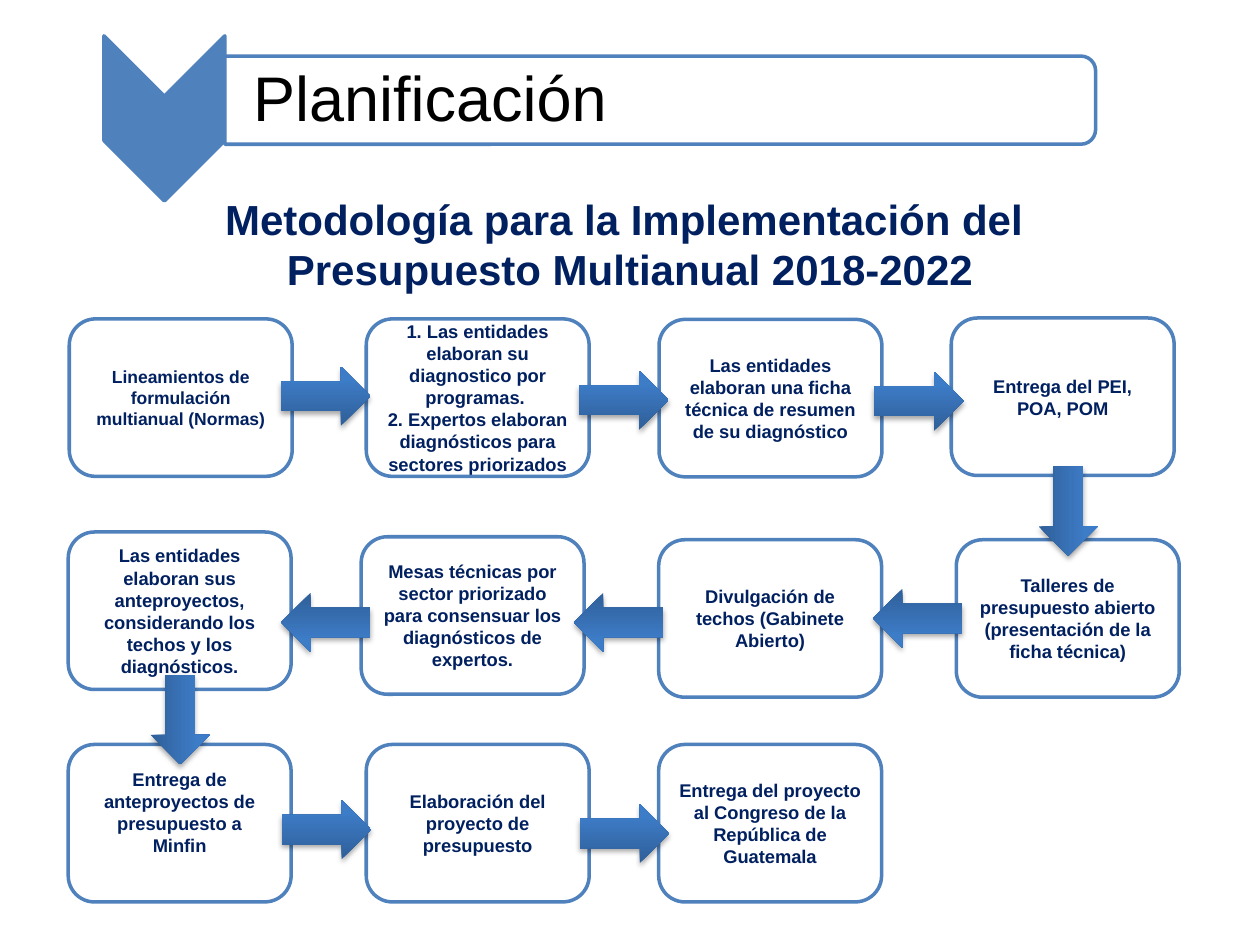
from dataclasses import dataclass

import lxml.etree
import pptx
import pptx.dml.color
import pptx.enum.shapes
import pptx.enum.text
import pptx.oxml
import pptx.oxml.ns
import pptx.util

Pt = pptx.util.Pt
KIND = pptx.enum.shapes.MSO_SHAPE
ALIGN = pptx.enum.text.PP_ALIGN
HUES = {"blue": "4F81BD", "navy": "002060", "white": "FFFFFF", "black": "000000",
        "dark": "2F5F99", "mid": "3D7CC7", "light": "3A7CCB"}
BOX_W, BOX_H = 127.4, 90
ARROW_W, ARROW_H = 51.1, 33.8


@dataclass
class Step:
    left: float
    top: float
    lines: list[str]
    size: float = 10.5
    foot: float = 3.6


@dataclass
class Arrow:
    left: float
    top: float
    turn: int = 0


STEPS = [
    # Top row
    Step(39.6, 182.2, ["Lineamientos de formulación multianual (Normas)"], size=10),
    Step(209.3, 182.2, ["1. Las entidades elaboran su diagnostico por programas. ",
                        "2. Expertos elaboran diagnósticos para sectores priorizados"]),
    Step(376.6, 182.5, ["Las entidades elaboran una ficha técnica de resumen de su diagnóstico"]),
    Step(543.6, 181.7, ["Entrega del PEI, POA, POM"]),
    # Middle row, read from right to left
    Step(546.5, 308.4, ["Talleres de presupuesto abierto (presentación de la ficha técnica)"]),
    Step(376.4, 308.4, ["Divulgación de techos (Gabinete Abierto)"]),
    Step(206.4, 306.7, ["Mesas técnicas por sector priorizado para consensuar "
                        "los diagnósticos de expertos."]),
    Step(39, 304, ["Las entidades elaboran sus anteproyectos, considerando "
                   "los techos y los diagnósticos."]),
    # Bottom row
    Step(39, 425.4, ["Entrega de anteproyectos de presupuesto a Minfin"], foot=15.8),
    Step(209.3, 425.4, ["Elaboración del proyecto de presupuesto"]),
    Step(376.4, 425.4, ["Entrega del proyecto al Congreso de la República de Guatemala"]),
]

ARROWS = [
    Arrow(160.6, 209.5), Arrow(331, 211.8), Arrow(499.6, 212.4),
    Arrow(584.8, 275.2, 90),
    Arrow(498.8, 336.4, 180), Arrow(327.8, 338.8, 180), Arrow(160.6, 338.8, 180),
    Arrow(77.3, 394.4, 90),
    Arrow(161, 457.2), Arrow(331.4, 459.4),
]


def tint(name: str) -> pptx.dml.color.RGBColor:
    return pptx.dml.color.RGBColor.from_string(HUES[name])


def add_shape(slide, kind, left: float, top: float, width: float, height: float,
              fill: str, turn: int = 0):
    shape = slide.shapes.add_shape(kind, Pt(left), Pt(top), Pt(width), Pt(height))
    shape.rotation = turn
    shape.shadow.inherit = False
    shape.fill.solid()
    shape.fill.fore_color.rgb = tint(fill)
    shape.line.color.rgb = tint("blue")
    shape.line.width = Pt(2)
    return shape


def write(shape, lines: list[str], size: float, hue: str, bold: bool, align) -> None:
    frame = shape.text_frame
    frame.word_wrap = True
    frame.vertical_anchor = pptx.enum.text.MSO_ANCHOR.MIDDLE
    for i, line in enumerate(lines):
        para = frame.paragraphs[0] if i == 0 else frame.add_paragraph()
        para.text = line
        para.alignment = align
        para.font.name = "Arial"
        para.font.size = Pt(size)
        para.font.bold = bold
        para.font.color.rgb = tint(hue)


def add_text(slide, left: float, top: float, width: float, height: float):
    return slide.shapes.add_textbox(Pt(left), Pt(top), Pt(width), Pt(height))


def draw_head(slide) -> None:
    add_shape(slide, KIND.CHEVRON, 46.8, 33.1, 94.3, 69.1, "blue", 90)
    add_shape(slide, KIND.ROUND_2_SAME_RECTANGLE, 352.1, -191.5, 50.4, 497.5, "white", 90)
    label = add_text(slide, 128.9, 34.6, 495.4, 46.1)
    write(label, ["Planificación"], 36, "black", False, ALIGN.LEFT)
    frame = label.text_frame
    frame.margin_left = Pt(15.8)
    frame.margin_top = frame.margin_right = frame.margin_bottom = Pt(1.4)
    frame.paragraphs[0].line_spacing = 0.9

    title = add_text(slide, 36, 94.3, 648, 90)
    write(title, ["Metodología para la Implementación del \vPresupuesto Multianual 2018-2022"],
          24, "navy", True, ALIGN.CENTER)


def draw_step(slide, step: Step) -> None:
    box = add_shape(slide, KIND.ROUNDED_RECTANGLE, step.left, step.top, BOX_W, BOX_H, "white")
    write(box, step.lines, step.size, "navy", True, ALIGN.CENTER)
    box.text_frame.margin_bottom = Pt(step.foot)


def draw_arrow(slide, arrow: Arrow) -> None:
    shape = add_shape(slide, KIND.RIGHT_ARROW, arrow.left, arrow.top,
                      ARROW_W, ARROW_H, "mid", arrow.turn)
    shape.line.fill.background()
    props = shape.element.spPr
    space = pptx.oxml.ns.nsdecls("a")
    # Three-stop gradient, dark at the foot
    stops = "".join(f'<a:gs pos="{pos}"><a:srgbClr val="{HUES[name]}"/></a:gs>'
                    for pos, name in ((0, "dark"), (80000, "mid"), (100000, "light")))
    grad = pptx.oxml.parse_xml(
        f'<a:gradFill {space} rotWithShape="1"><a:gsLst>{stops}</a:gsLst>'
        '<a:lin ang="16200000" scaled="0"/></a:gradFill>')
    props.replace(props.find(pptx.oxml.ns.qn("a:solidFill")), grad)
    # Soft shadow below
    glow = pptx.oxml.parse_xml(
        f'<a:outerShdw {space} blurRad="{Pt(3.1)}" dist="{Pt(1.8)}" dir="5400000" '
        f'rotWithShape="0"><a:srgbClr val="{HUES["black"]}"><a:alpha val="35000"/>'
        '</a:srgbClr></a:outerShdw>')
    props.find(pptx.oxml.ns.qn("a:effectLst")).append(glow)


def main() -> None:
    deck = pptx.Presentation()
    deck.slide_width, deck.slide_height = Pt(720), Pt(540)
    slide = deck.slides.add_slide(deck.slide_layouts[6])
    draw_head(slide)
    for step in STEPS:
        draw_step(slide, step)
    for arrow in ARROWS:
        draw_arrow(slide, arrow)
    deck.save("out.pptx")


if __name__ == "__main__":
    main()
